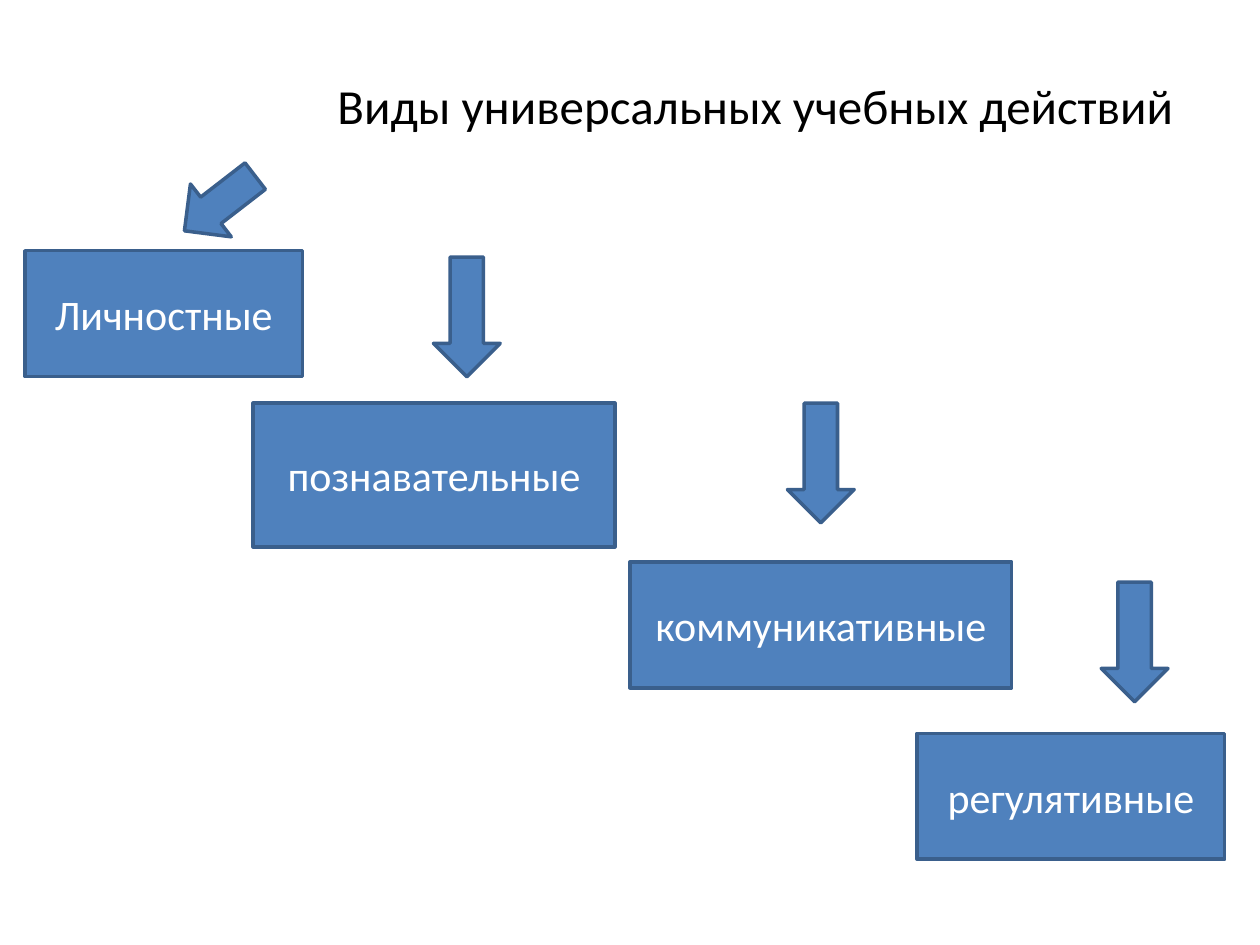
"""Build a slide that shows four kinds of learning actions as descending steps."""
import pptx
import pptx.dml.color
import pptx.enum.shapes
import pptx.enum.text
import pptx.util

Inches = pptx.util.Inches
SHAPES = pptx.enum.shapes.MSO_SHAPE
COLORS = {"title": "000000", "label": "FFFFFF", "fill": "4F81BD", "line": "3A5F8C"}
TITLE = "Виды универсальных учебных действий"
STEPS = [
    ("Личностные", 0.2, 1.99, 2.2, 1),
    ("познавательные", 2.01, 3.2, 2.87, 1.14),
    ("коммуникативные", 5, 4.46, 3.03, 1),
    ("регулятивные", 7.28, 5.82, 2.44, 1),
]
ARROWS = [
    (1.48, 1.26, 0.71, 52.3),
    (3.44, 2.04, 0.95, 0),
    (6.25, 3.2, 0.95, 0),
    (8.74, 4.62, 0.95, 0),
]
ARROW_WIDTH = 0.53


def color(name):
    return pptx.dml.color.RGBColor.from_string(COLORS[name])


def set_attributes(target, values):
    for name, value in values.items():
        setattr(target, name, value)


def write_text(shape, text, size, color_name, paragraph_format):
    paragraph = shape.text_frame.paragraphs[0]
    set_attributes(paragraph, paragraph_format)
    run = paragraph.add_run()
    run.text = text
    set_attributes(run.font, {"name": "Calibri", "size": pptx.util.Pt(size)})
    run.font.color.rgb = color(color_name)


def add_title(slide):
    shape = slide.shapes.add_textbox(*map(Inches, (0.08, 0.55, 9.57, 0.57)))
    set_attributes(shape.text_frame, {
        "word_wrap": True,
        "auto_size": pptx.enum.text.MSO_AUTO_SIZE.SHAPE_TO_FIT_TEXT,
    })
    write_text(shape, TITLE, 28, "title", {"level": 5})


def add_block(slide, kind, *box):
    shape = slide.shapes.add_shape(kind, *map(Inches, box))
    shape.shadow.inherit = False
    shape.fill.solid()
    shape.fill.fore_color.rgb = color("fill")
    shape.line.color.rgb = color("line")
    shape.line.width = pptx.util.Pt(2)
    return shape


def add_step(slide, label, *box):
    shape = add_block(slide, SHAPES.RECTANGLE, *box)
    set_attributes(shape.text_frame, {
        "word_wrap": True,
        "vertical_anchor": pptx.enum.text.MSO_ANCHOR.MIDDLE,
    })
    write_text(shape, label, 24, "label", {"alignment": pptx.enum.text.PP_ALIGN.CENTER})


def add_arrow(slide, left, top, height, rotation):
    shape = add_block(slide, SHAPES.DOWN_ARROW, left, top, ARROW_WIDTH, height)
    shape.rotation = rotation


def main():
    presentation = pptx.Presentation()
    set_attributes(presentation, {"slide_width": Inches(10), "slide_height": Inches(7.5)})
    slide = presentation.slides.add_slide(presentation.slide_layouts[6])
    add_title(slide)
    for step in STEPS:
        add_step(slide, *step)
    for arrow in ARROWS:
        add_arrow(slide, *arrow)
    presentation.save("out.pptx")


if __name__ == "__main__":
    main()
